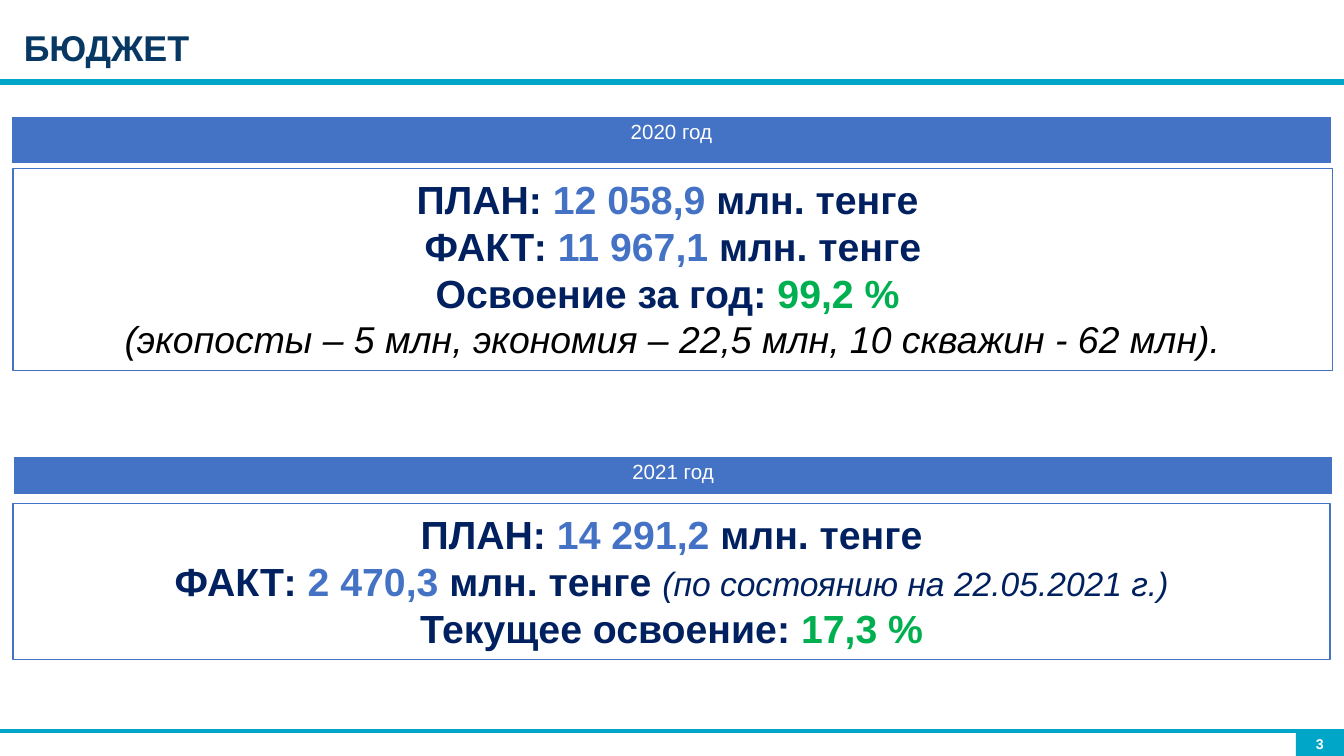
import pptx
import pptx.dml.color
import pptx.enum.shapes
import pptx.enum.text
import pptx.oxml
import pptx.oxml.ns
import pptx.util

Cm = pptx.util.Cm
Pt = pptx.util.Pt
RGBColor = pptx.dml.color.RGBColor
ALIGN = pptx.enum.text.PP_ALIGN
ANCHOR = pptx.enum.text.MSO_ANCHOR
RECTANGLE = pptx.enum.shapes.MSO_SHAPE.RECTANGLE

WHITE = RGBColor(0xFF, 0xFF, 0xFF)
BLACK = RGBColor(0, 0, 0)
TEAL = RGBColor(0x00, 0xA6, 0xC8)
TITLE_BLUE = RGBColor(0x07, 0x37, 0x63)
NAVY = RGBColor(0x00, 0x20, 0x60)
BLUE = RGBColor(0x44, 0x72, 0xC4)
GREEN = RGBColor(0x00, 0xB0, 0x50)

FONT = "Arial"
PAGE_WIDTH = Cm(25.4)
PAGE_HEIGHT = Cm(14.29)


def add_span(para, text, color, size=21, bold=True, italic=False):
    span = para.add_run()
    span.text = text
    font = span.font
    font.name = FONT
    font.size = Pt(size)
    font.bold = bold
    font.italic = italic
    font.color.rgb = color


def add_rule(page, y, width):
    """Draw a teal line across the whole page."""
    rule = page.shapes.add_connector(
        pptx.enum.shapes.MSO_CONNECTOR.STRAIGHT, 0, y, PAGE_WIDTH, y)
    rule.line.color.rgb = TEAL
    rule.line.width = Pt(width)
    pptx.oxml.ns.qn("a:effectLst")
    rule._element.spPr.append(
        rule._element.makeelement(pptx.oxml.ns.qn("a:effectLst"), {}))


def add_title(page, text):
    box = page.shapes.add_textbox(Cm(0.2), Cm(0.1), Cm(24.97), Cm(1.47))
    frame = box.text_frame
    frame.word_wrap = True
    frame.vertical_anchor = ANCHOR.MIDDLE
    para = frame.paragraphs[0]
    para.line_spacing = 1.15
    add_span(para, text, TITLE_BLUE, 19.2)


def add_rectangle(page, left, top, width, height):
    box = page.shapes.add_shape(RECTANGLE, left, top, width, height)
    box.shadow.inherit = False
    return box


def add_page_number(page, number):
    width, height = Cm(0.91), Cm(0.46)
    box = add_rectangle(page, PAGE_WIDTH - width, PAGE_HEIGHT - height, width, height)
    box.fill.solid()
    box.fill.fore_color.rgb = TEAL
    box.line.fill.background()
    frame = box.text_frame
    frame.margin_left = frame.margin_right = 0
    frame.margin_top = frame.margin_bottom = 0
    frame.vertical_anchor = ANCHOR.MIDDLE
    para = frame.paragraphs[0]
    para.alignment = ALIGN.CENTER
    add_span(para, number, WHITE, 7.6)


def add_cell_borders(cell):
    properties = cell._tc.get_or_add_tcPr()
    for side, width in (("L", 1), ("R", 1), ("T", 1), ("B", 3)):
        properties.append(pptx.oxml.parse_xml(
            f'<a:ln{side} {pptx.oxml.ns.nsdecls("a")} w="{Pt(width)}">'
            f'<a:solidFill><a:srgbClr val="{WHITE}"/></a:solidFill></a:ln{side}>'))


def add_year_bar(page, text, left, top, height):
    """Add a one-cell table that heads the figures of a year."""
    table = page.shapes.add_table(1, 1, left, top, Cm(24.94), height).table
    cell = table.cell(0, 0)
    add_cell_borders(cell)
    cell.fill.solid()
    cell.fill.fore_color.rgb = BLUE
    cell.margin_left = cell.margin_right = Cm(0.18)
    cell.margin_top = cell.margin_bottom = Cm(0.09)
    para = cell.text_frame.paragraphs[0]
    para.alignment = ALIGN.CENTER
    add_span(para, text, WHITE, 11, bold=False)


def add_figures(page, top, width, height, lines):
    """Add an outlined box; each line is a list of add_span arguments."""
    box = add_rectangle(page, Cm(0.25), top, width, height)
    box.fill.background()
    box.line.color.rgb = BLUE
    box.line.width = Pt(0.75)
    frame = box.text_frame
    frame.word_wrap = True
    frame.auto_size = pptx.enum.text.MSO_AUTO_SIZE.SHAPE_TO_FIT_TEXT
    frame.vertical_anchor = ANCHOR.TOP
    for index, line in enumerate(lines):
        para = frame.add_paragraph() if index else frame.paragraphs[0]
        para.alignment = ALIGN.CENTER
        for span in line:
            add_span(para, *span)


def main():
    deck = pptx.Presentation()
    deck.slide_width = PAGE_WIDTH
    deck.slide_height = PAGE_HEIGHT
    page = deck.slides.add_slide(deck.slide_layouts[6])

    add_rule(page, Cm(1.55), 3)
    add_rule(page, Cm(13.82), 2)
    add_page_number(page, "3")
    add_title(page, "БЮДЖЕТ")

    add_year_bar(page, "2020 год", Cm(0.22), Cm(2.2), Cm(0.93))
    add_figures(page, Cm(3.19), Cm(24.94), Cm(3.82), [
        [("ПЛАН: ", NAVY), ("12 058,9 ", BLUE), ("млн. тенге ", NAVY)],
        [("ФАКТ: ", NAVY), ("11 967,1 ", BLUE), ("млн. тенге", NAVY)],
        [("Освоение за год: ", NAVY), ("99,2 % ", GREEN)],
        [("(экопосты – 5 млн, экономия – 22,5 млн, 10 скважин - 62 млн).",
          BLACK, 20, False, True)],
    ])

    add_year_bar(page, "2021 год", Cm(0.25), Cm(8.62), Cm(0.77))
    add_figures(page, Cm(9.52), Cm(24.89), Cm(2.95), [
        [("ПЛАН: ", NAVY), ("14 291,2 ", BLUE), ("млн. тенге", NAVY)],
        [("ФАКТ: ", NAVY), ("2 470,3 ", BLUE), ("млн. тенге ", NAVY),
         ("(по состоянию на 22.05.2021 г.)", NAVY, 18, False, True)],
        [("Текущее освоение: ", NAVY), ("17,3 %", GREEN)],
    ])

    deck.save("out.pptx")


if __name__ == "__main__":
    main()
